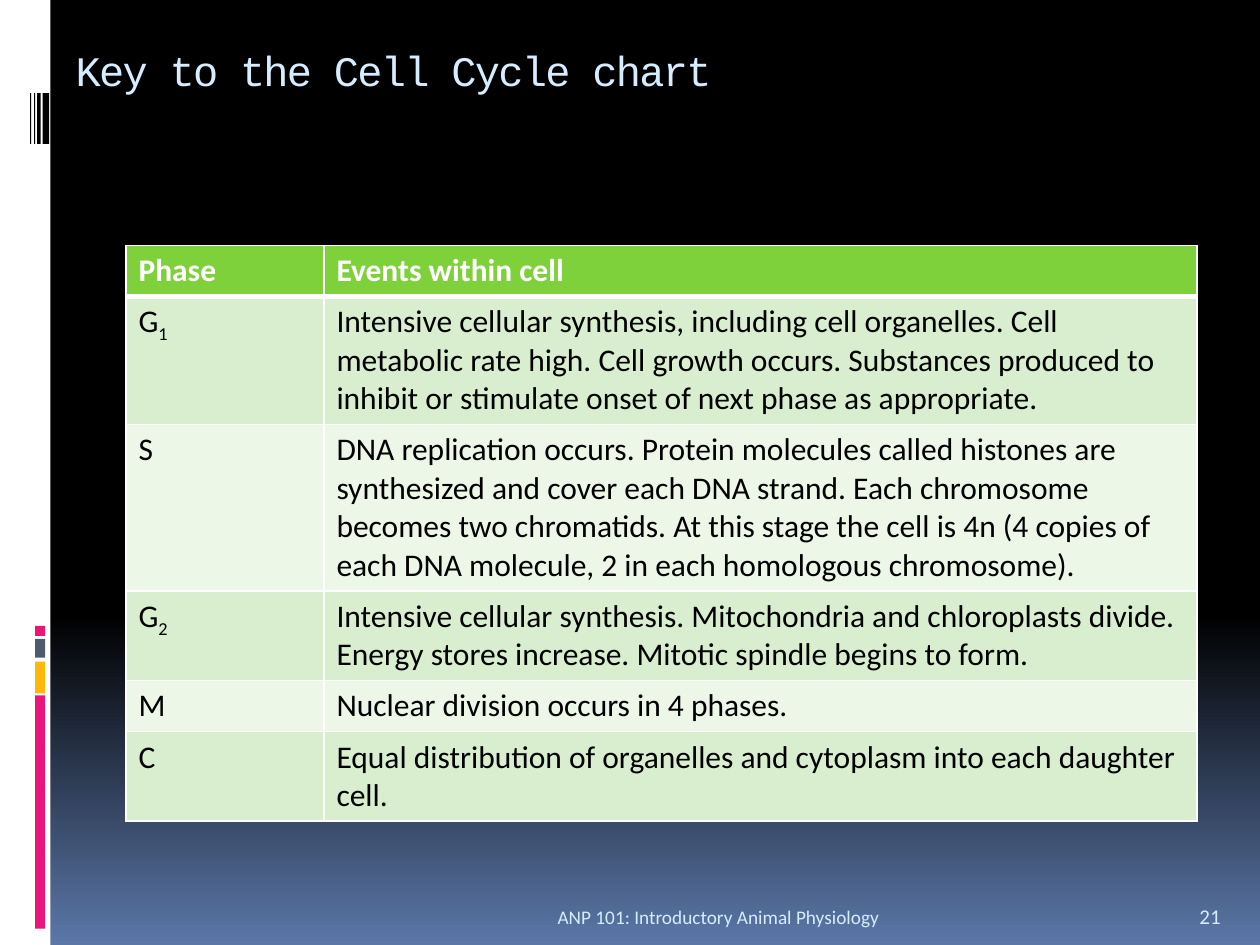
from copy import deepcopy

from lxml.etree import SubElement
from pptx import Presentation
from pptx.dml.color import RGBColor
from pptx.enum.shapes import MSO_SHAPE
from pptx.enum.text import MSO_ANCHOR, PP_ALIGN
from pptx.oxml.ns import qn
from pptx.util import Cm, Pt

TITLE = "Key to the Cell Cycle chart"
FOOTER = "ANP 101: Introductory Animal Physiology"
PAGE = "21"
PALE_BLUE = "D6ECFF"

# The part of a phase name after "_" is a subscript.
ROWS = [
    ("Phase", "Events within cell"),
    ("G_1", "Intensive cellular synthesis, including cell organelles. Cell metabolic rate high. "
            "Cell growth occurs. Substances produced to inhibit or stimulate onset of next phase "
            "as appropriate."),
    ("S", "DNA replication occurs. Protein molecules called histones are synthesized and cover "
          "each DNA strand. Each chromosome becomes two chromatids. At this stage the cell is 4n "
          "(4 copies of each DNA molecule, 2 in each homologous chromosome)."),
    ("G_2", "Intensive cellular synthesis. Mitochondria and chloroplasts divide. Energy stores "
            "increase. Mitotic spindle begins to form."),
    ("M", "Nuclear division occurs in 4 phases."),
    ("C", "Equal distribution of organelles and cytoplasm into each daughter cell."),
]
COLUMN_WIDTHS = (3.99, 17.6)
ROW_HEIGHT = 1.03
HEADER_FILL = "7FD13B"
BAND_FILLS = ("ECF7E8", "D8EECE")

GRADIENT = [(0, "000000"), (0.65, "000000"), (1, "5B77A8")]
SIDE_BAR = (0, 0, 1.02, 19.05, "FFFFFF")
COLOUR_BARS = [  # top, height, colour
    (14.02, 4.7, "EA157A"),
    (13.34, 0.64, "FEB80A"),
    (12.88, 0.38, "4E5B6F"),
    (12.62, 0.2, "EA157A"),
]
BARCODE = [(0.86, 0.13), (0.75, 0.07), (0.69, 0.02), (0.61, 0.02)]  # left, width


def rgb(value):
    return RGBColor.from_string(value)


def add_run(p, text, size=18, font="Calibri", color="000000", bold=False,
            baseline=None, spacing=None):
    r = p.add_run()
    r.text = text
    r.font.size, r.font.name, r.font.bold = Pt(size), font, bold
    r.font.color.rgb = rgb(color)
    for name, value in (("baseline", baseline), ("spc", spacing)):
        if value is not None:
            r.font._element.set(name, str(value))


def add_bar(s, left, top, width, height, color):
    sp = s.shapes.add_shape(MSO_SHAPE.RECTANGLE, Cm(left), Cm(top), Cm(width), Cm(height))
    sp.shadow.inherit = False
    sp.fill.solid()
    sp.fill.fore_color.rgb = rgb(color)
    sp.line.fill.background()


def add_label(s, left, width, text, align, size):
    tf = s.shapes.add_textbox(Cm(left), Cm(17.83), Cm(width), Cm(1.02)).text_frame
    tf.word_wrap = True
    tf.vertical_anchor = MSO_ANCHOR.BOTTOM
    tf.paragraphs[0].alignment = align
    add_run(tf.paragraphs[0], text, size=size, color=PALE_BLUE)


def set_borders(cell, **widths):
    """Draw white borders, 1 pt wide unless a side (L, R, T, B) is given."""
    tc_pr = cell._tc.get_or_add_tcPr()
    for side in "LRTB":
        ln = SubElement(tc_pr, qn(f"a:ln{side}"), w=str(Pt(widths.get(side, 1))))
        fill = SubElement(ln, qn("a:solidFill"))
        SubElement(fill, qn("a:srgbClr"), val="FFFFFF")


def set_background(s):
    fill = s.background.fill
    fill.gradient()
    fill.gradient_angle = 270
    first = fill.gradient_stops[0]._gs
    first.addnext(deepcopy(first))
    for stop, (position, color) in zip(fill.gradient_stops, GRADIENT):
        stop.position = position
        stop.color.rgb = rgb(color)


def add_phase_table(s):
    table = s.shapes.add_table(len(ROWS), len(COLUMN_WIDTHS), Cm(2.54), Cm(4.95),
                               Cm(sum(COLUMN_WIDTHS)), Cm(ROW_HEIGHT * len(ROWS))).table
    for column, width in zip(table.columns, COLUMN_WIDTHS):
        column.width = Cm(width)
    for i, texts in enumerate(ROWS):
        table.rows[i].height = Cm(ROW_HEIGHT)
        header = i == 0
        for j, text in enumerate(texts):
            cell = table.cell(i, j)
            set_borders(cell, T=3 if i == 1 else 1, B=3 if header else 1)
            cell.fill.solid()
            cell.fill.fore_color.rgb = rgb(HEADER_FILL if header else BAND_FILLS[i % 2])
            p = cell.text_frame.paragraphs[0]
            base, _, subscript = text.partition("_")
            add_run(p, base, color="FFFFFF" if header else "000000", bold=header)
            if subscript:
                add_run(p, subscript, baseline=-25000)


def main():
    prs = Presentation()
    prs.slide_width, prs.slide_height = Cm(25.4), Cm(19.05)
    s = prs.slides.add_slide(prs.slide_layouts[5])
    set_background(s)

    add_bar(s, *SIDE_BAR)
    for top, height, color in COLOUR_BARS:
        add_bar(s, 0.71, top, 0.2, height, color)
    for left, width in BARCODE:
        add_bar(s, left, 1.88, width, 1.02, "000000")

    title = s.shapes.title
    title.left, title.top, title.width, title.height = Cm(1.27), Cm(0.76), Cm(22.86), Cm(2.21)
    tf = title.text_frame
    tf.vertical_anchor = MSO_ANCHOR.TOP
    tf.paragraphs[0].alignment = PP_ALIGN.LEFT
    add_run(tf.paragraphs[0], TITLE, size=24, font="Courier New", color=PALE_BLUE, spacing=-100)

    add_phase_table(s)
    add_label(s, 2.54, 15.44, FOOTER, PP_ALIGN.RIGHT, 11)
    add_label(s, 23.93, 1.27, PAGE, PP_ALIGN.LEFT, 12)
    prs.save("out.pptx")


if __name__ == "__main__":
    main()
